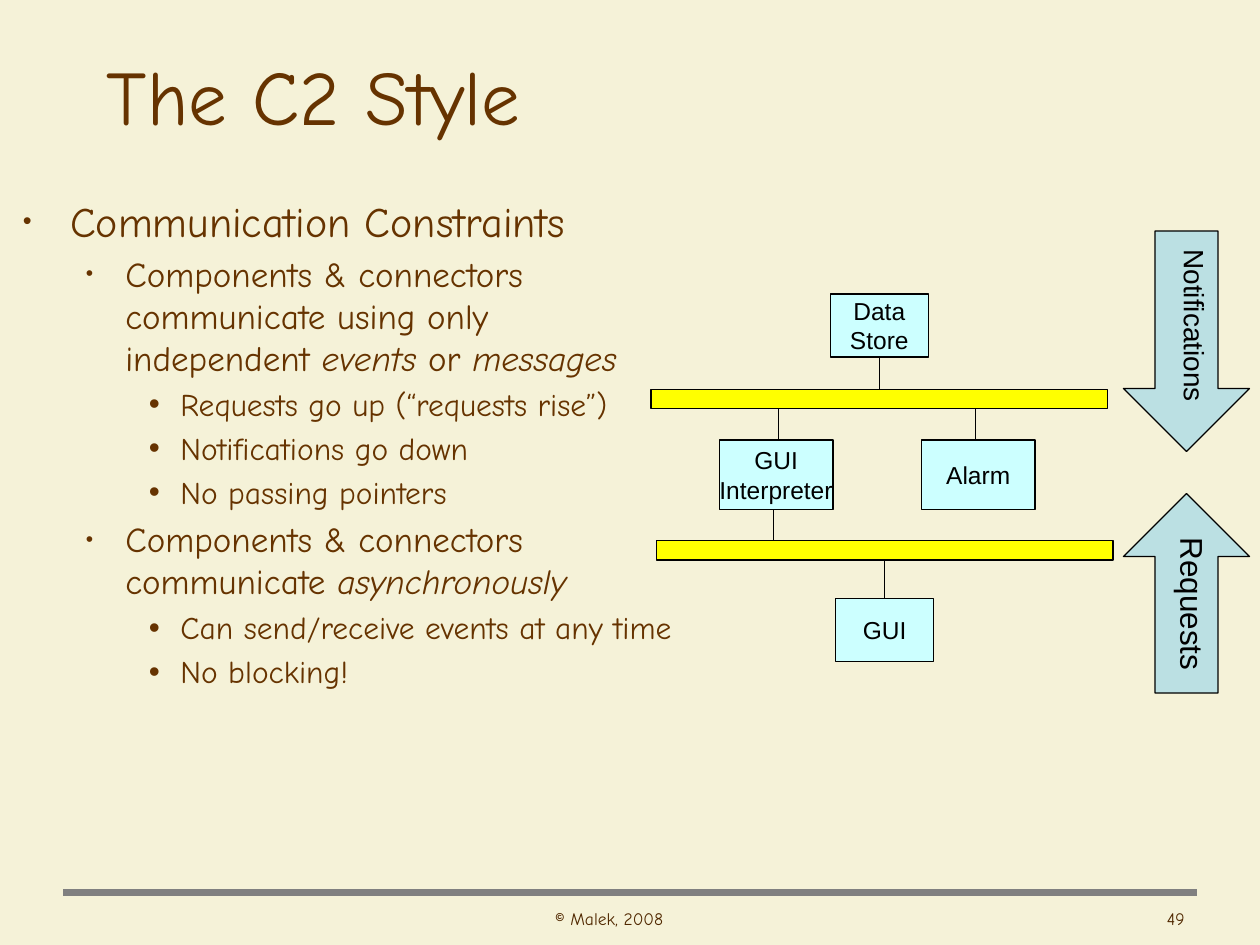
from dataclasses import dataclass
from typing import Optional

from lxml.etree import SubElement
from pptx import Presentation
from pptx.dml.color import RGBColor
from pptx.enum.shapes import MSO_CONNECTOR, MSO_SHAPE
from pptx.enum.text import MSO_ANCHOR, PP_ALIGN
from pptx.oxml.ns import qn
from pptx.util import Pt

COLORS = {
    "background": "F5F2D8",
    "text": "663300",
    "footer": "502800",
    "rule": "808080",
    "component": "CCFFFF",
    "bus": "FFFF00",
    "arrow": "BBE0E3",
    "black": "000000",
}
BODY_FONT = "Comic Neue"
DIAGRAM_FONT = "Arial"


@dataclass(frozen=True)
class Level:
    margin: float
    hanging: float
    size: float
    bullet_percent: int


@dataclass(frozen=True)
class Bullet:
    level: int
    runs: tuple[str, ...]


@dataclass(frozen=True)
class Box:
    left: float
    top: float
    width: float
    height: float
    fill: str
    lines: tuple[str, ...] = ()
    size: float = 14
    preset: MSO_SHAPE = MSO_SHAPE.RECTANGLE


@dataclass(frozen=True)
class Label:
    left: float
    top: float
    width: float
    height: float
    text: str
    size: float
    color: str
    alignment: PP_ALIGN
    anchor: MSO_ANCHOR = MSO_ANCHOR.TOP


LEVELS = (
    Level(27, 27, 24, 60),
    Level(58.5, 22.5, 20, 60),
    Level(90, 18, 18, 100),
)
BULLETS = (
    Bullet(0, ("Communication Constraints",)),
    Bullet(1, ("Components & connectors communicate using only independent ",
               "events", " or ", "messages")),
    Bullet(2, ("Requests go up (“requests rise”)",)),
    Bullet(2, ("Notifications go down",)),
    Bullet(2, ("No passing pointers",)),
    Bullet(1, ("Components & connectors communicate ", "asynchronously")),
    Bullet(2, ("Can send/receive events at any time",)),
    Bullet(2, ("No blocking!",)),
)
LABELS = (
    Label(54, 24, 643, 60, "The C2 Style", 44, "text", PP_ALIGN.LEFT, MSO_ANCHOR.MIDDLE),
    Label(264, 515.5, 168, 24, "© Malek, 2008", 10, "footer", PP_ALIGN.CENTER),
    Label(432, 515.5, 252, 24, "49", 10, "footer", PP_ALIGN.RIGHT),
)
DATA_STORE = Box(474.5, 168, 56, 36, "component", ("Data", "Store"))
GUI = Box(477.5, 342, 56, 36, "component", ("GUI",))
INTERPRETER = Box(411, 251.5, 65, 39.5, "component", ("GUI", "Interpreter"))
ALARM = Box(526.5, 251.5, 65, 39.5, "component", ("Alarm",))
UPPER_BUS = Box(372, 222.5, 261, 11, "bus")
LOWER_BUS = Box(375, 309, 261, 11, "bus")
NOTIFICATIONS = Box(642, 132, 72, 126, "arrow", ("Notifications",), 16, MSO_SHAPE.DOWN_ARROW)
REQUESTS = Box(642, 282, 72, 114, "arrow", ("Requests",), 18, MSO_SHAPE.DOWN_ARROW)


def color(name: str) -> RGBColor:
    return RGBColor.from_string(COLORS[name])


def add_run(paragraph, text: str, font: str, size: float, color_name: str,
            italic: Optional[bool] = None) -> None:
    run = paragraph.add_run()
    run.text = text
    run.font.name = font
    run.font.size = Pt(size)
    run.font.italic = italic
    run.font.color.rgb = color(color_name)


def next_paragraph(frame, index: int):
    return frame.add_paragraph() if index else frame.paragraphs[0]


def add_label(slide, label: Label) -> None:
    shape = slide.shapes.add_textbox(
        Pt(label.left), Pt(label.top), Pt(label.width), Pt(label.height))
    frame = shape.text_frame
    frame.word_wrap = True
    frame.vertical_anchor = label.anchor
    paragraph = frame.paragraphs[0]
    paragraph.alignment = label.alignment
    add_run(paragraph, label.text, BODY_FONT, label.size, label.color)


def add_bullets(slide) -> None:
    frame = slide.shapes.add_textbox(Pt(6), Pt(108), Pt(390), Pt(354)).text_frame
    frame.word_wrap = True
    for index, bullet in enumerate(BULLETS):
        level = LEVELS[bullet.level]
        paragraph = next_paragraph(frame, index)
        paragraph.level = bullet.level
        properties = paragraph._p.get_or_add_pPr()
        properties.set("marL", str(Pt(level.margin)))
        properties.set("indent", str(-Pt(level.hanging)))
        SubElement(properties, qn("a:buSzPct")).set("val", str(level.bullet_percent * 1000))
        SubElement(properties, qn("a:buFont")).set("typeface", DIAGRAM_FONT)
        SubElement(properties, qn("a:buChar")).set("char", "•")
        if index:
            paragraph.space_before = Pt(level.size * 0.2)
        for position, text in enumerate(bullet.runs):
            add_run(paragraph, text, BODY_FONT, level.size, "text", position % 2 == 1)


def add_box(slide, box: Box):
    shape = slide.shapes.add_shape(
        box.preset, Pt(box.left), Pt(box.top), Pt(box.width), Pt(box.height))
    shape.shadow.inherit = False
    shape.fill.solid()
    shape.fill.fore_color.rgb = color(box.fill)
    shape.line.color.rgb = color("black")
    shape.line.width = Pt(0.75)
    frame = shape.text_frame
    frame.word_wrap = False
    for index, text in enumerate(box.lines):
        paragraph = next_paragraph(frame, index)
        paragraph.alignment = PP_ALIGN.CENTER
        add_run(paragraph, text, DIAGRAM_FONT, box.size, "black")
    return shape


def add_arrow(slide, box: Box, direction: str, alignment: PP_ALIGN, rotation: float) -> None:
    shape = add_box(slide, box)
    shape.rotation = rotation
    frame = shape.text_frame
    frame.word_wrap = True
    frame.vertical_anchor = MSO_ANCHOR.TOP
    frame.paragraphs[0].alignment = alignment
    frame._txBody.bodyPr.set("vert", direction)


def add_line(slide, start: tuple[float, float], end: tuple[float, float],
             color_name: str = "black", width: float = 0.75):
    connector = slide.shapes.add_connector(
        MSO_CONNECTOR.STRAIGHT, *(Pt(value) for value in start + end))
    connector.line.color.rgb = color(color_name)
    connector.line.width = Pt(width)
    SubElement(connector._element.spPr, qn("a:effectLst"))
    return connector


def join(slide, upper_shape, lower_shape) -> None:
    connector = add_line(slide, (0, 0), (0, 0))
    connector.begin_connect(upper_shape, 2)
    connector.end_connect(lower_shape, 0)


def main() -> None:
    presentation = Presentation()
    presentation.slide_width, presentation.slide_height = Pt(720), Pt(540)
    slide = presentation.slides.add_slide(presentation.slide_layouts[6])
    slide.background.fill.solid()
    slide.background.fill.fore_color.rgb = color("background")

    add_line(slide, (36, 510), (684, 510), "rule", 4.5)
    for label in LABELS:
        add_label(slide, label)
    add_bullets(slide)

    data_store, gui, _, _, upper_bus, lower_bus = [
        add_box(slide, box)
        for box in (DATA_STORE, GUI, INTERPRETER, ALARM, UPPER_BUS, LOWER_BUS)]
    join(slide, data_store, upper_bus)
    join(slide, lower_bus, gui)
    for x, top, bottom in ((445, 233.5, 251.5), (557.5, 233.5, 251.5), (442, 291, 309)):
        add_line(slide, (x, top), (x, bottom))

    add_arrow(slide, NOTIFICATIONS, "vert", PP_ALIGN.CENTER, 0)
    add_arrow(slide, REQUESTS, "vert270", PP_ALIGN.LEFT, 180)
    presentation.save("out.pptx")


if __name__ == "__main__":
    main()
